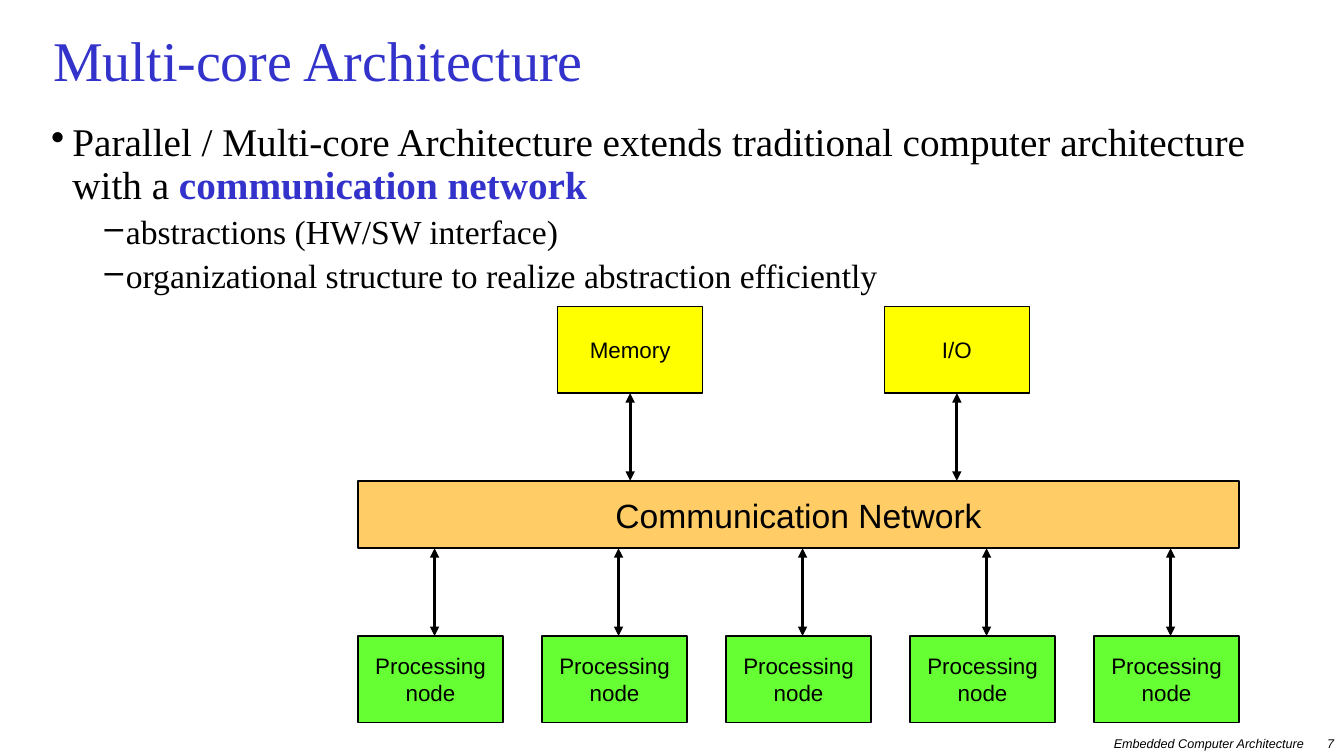
from lxml import etree
from pptx import Presentation
from pptx.dml.color import RGBColor
from pptx.enum.shapes import MSO_CONNECTOR as LINK, MSO_SHAPE as SHAPE
from pptx.enum.text import MSO_ANCHOR as ANCHOR, PP_ALIGN as ALIGN
from pptx.oxml.ns import qn
from pptx.util import Pt

PX = 9144  # 100 px to the inch
HUES = {
    "ink": "000000", "blue": "3333CC", "paper": "FFFFFF",
    "yellow": "FFFF00", "orange": "FFCC66", "green": "66FF33",
}
SERIF, SANS = "Times New Roman", "Arial"


def emu(*vals):
    return [round(v * PX) for v in vals]


def hue(name):
    return RGBColor.from_string(HUES[name])


def write(frame, paras, size=16, font=SANS, color="ink", bold=False,
          italic=False, align=ALIGN.LEFT, anchor=ANCHOR.TOP, wrap=True,
          space=None):
    """Fill a frame; a paragraph is a string or a list of (text, format) runs."""
    frame.word_wrap = wrap
    frame.vertical_anchor = anchor
    for i, runs in enumerate(paras):
        par = frame.paragraphs[0] if i == 0 else frame.add_paragraph()
        par.alignment = align
        if space:
            par.line_spacing = space
        for words, fmt in [(runs, {})] if isinstance(runs, str) else runs:
            run = par.add_run()
            run.text = words
            face = run.font
            face.name = font
            face.size = Pt(fmt.get("size", size))
            face.bold = fmt.get("bold", bold)
            face.italic = italic
            face.color.rgb = hue(fmt.get("color", color))


def label(slide, box, paras, **fmt):
    area = slide.shapes.add_textbox(*emu(*box))
    write(area.text_frame, paras, **fmt)
    return area.text_frame


def bullet(par, mark, left, hang, size):
    par.space_before = Pt(round(size * 0.23, 1))
    props = par._p.get_or_add_pPr()
    props.set("marL", str(left * PX))
    props.set("indent", str(-hang * PX))
    etree.SubElement(props, qn("a:buChar")).set("char", mark)


def block(slide, box, paras, fill, size=16, edge=1):
    rect = slide.shapes.add_shape(SHAPE.RECTANGLE, *emu(*box))
    rect.shadow.inherit = False
    rect.fill.solid()
    rect.fill.fore_color.rgb = hue(fill)
    rect.line.color.rgb = hue("ink")
    rect.line.width = Pt(edge)
    write(rect.text_frame, paras, size=size, align=ALIGN.CENTER,
          anchor=ANCHOR.MIDDLE, wrap=False)
    return rect


def arrow(slide, x, top, end):
    """Draw a vertical line with a head at both ends."""
    link = slide.shapes.add_connector(LINK.STRAIGHT, *emu(x, top, x, end))
    link.line.color.rgb = hue("ink")
    link.line.width = Pt(2.25)
    line = link.line._get_or_add_ln()
    for tip in ("a:headEnd", "a:tailEnd"):
        etree.SubElement(line, qn(tip)).set("type", "triangle")
    etree.SubElement(link._element.spPr, qn("a:effectLst"))
    return link


def title(slide, box):
    label(slide, box, ["Multi-core Architecture"], size=40, font=SERIF,
          color="blue", anchor=ANCHOR.MIDDLE, space=0.8)


def body(slide, box):
    sub = {"size": 24}
    frame = label(slide, box, [
        [("Parallel / Multi-core Architecture extends traditional computer "
          "architecture with a ", {}),
         ("communication network", {"color": "blue", "bold": True})],
        [("abstractions (HW/SW interface)", sub)],
        [("organizational structure to realize abstraction efficiently", sub)],
    ], size=28, font=SERIF, space=0.9)
    head, *rest = frame.paragraphs
    bullet(head, "•", 21, 21, 28)
    for par in rest:
        par.level = 1
        bullet(par, "–", 74, 21, 24)


def diagram(slide, box, count=5):
    left, top, width, height = box
    wide, high = 144, 86
    bus, deep = top + 173, 67
    base = top + height - high
    block(slide, (left, bus, width, deep), ["Communication Network"],
          "orange", size=24, edge=1.5)
    step = (width - wide) / (count - 1)
    for i in range(count):
        x = left + i * step
        block(slide, (x, base, wide, high), ["Processing", "node"], "green")
        arrow(slide, x + 76, bus + deep, base)
    for name, shift in (("Memory", 198), ("I/O", 522)):
        x = left + shift
        unit = block(slide, (x, top, wide, high), [name], "yellow")
        link = arrow(slide, x + wide / 2, top + high, bus)
        link.begin_connect(unit, 2)


def footer(slide, box):
    left, top, width, height = box
    page = 30
    fmt = {"size": 9, "italic": True, "align": ALIGN.RIGHT}
    label(slide, (left, top, width - page, height),
          ["Embedded Computer Architecture"], **fmt)
    label(slide, (left + width - page, top, page, height), ["7"], **fmt)


def main():
    deck = Presentation()
    deck.slide_width, deck.slide_height = emu(1333, 750)
    slide = deck.slides.add_slide(deck.slide_layouts[6])
    slide.background.fill.solid()
    slide.background.fill.fore_color.rgb = hue("paper")
    footer(slide, (950, 725, 383, 25))
    title(slide, (43, 25, 1246, 80))
    body(slide, (41, 117, 1252, 633))
    diagram(slide, (355, 304, 874, 413))
    deck.save("out.pptx")


if __name__ == "__main__":
    main()
